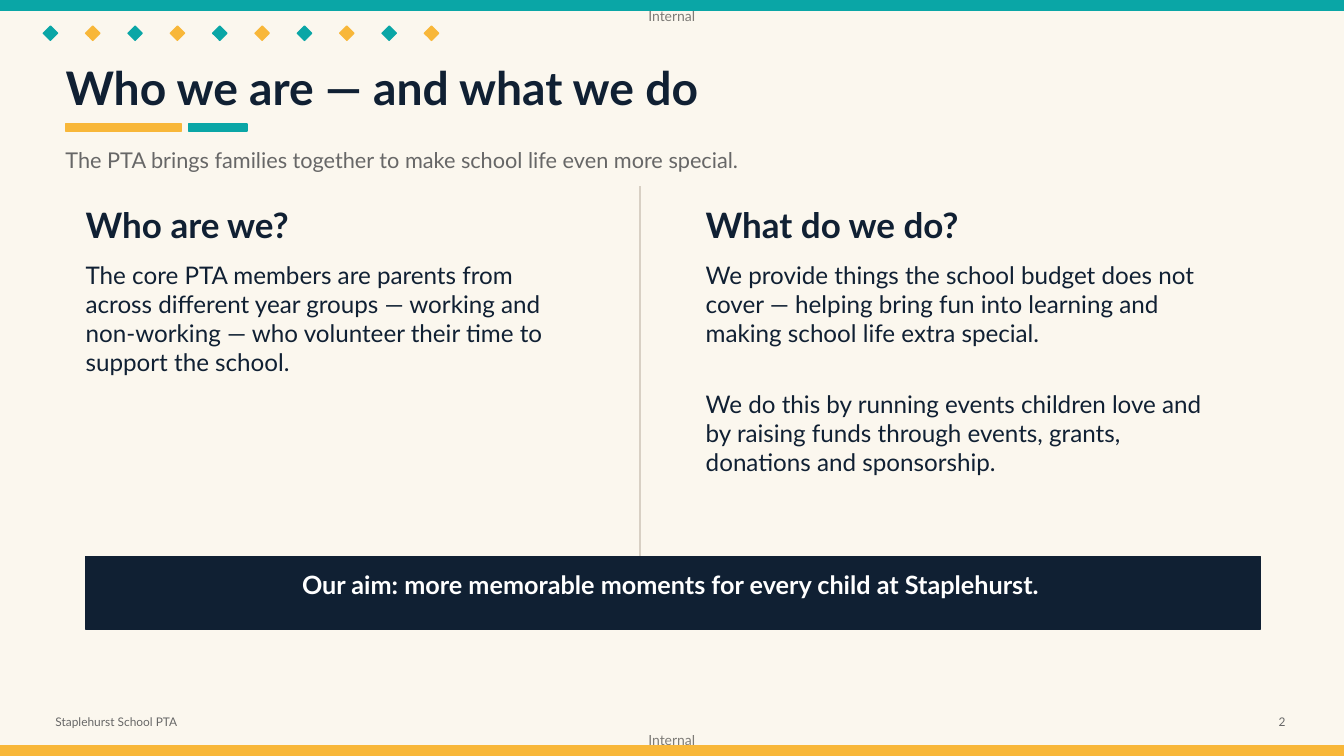
from lxml.etree import SubElement
from pptx import Presentation
from pptx.dml.color import RGBColor
from pptx.enum.shapes import MSO_CONNECTOR, MSO_SHAPE
from pptx.enum.text import MSO_ANCHOR, MSO_AUTO_SIZE, PP_ALIGN
from pptx.oxml.ns import qn
from pptx.util import Inches, Pt

COLORS = {
    "cream": "FBF7EE",
    "teal": "0AA6A6",
    "gold": "F8B739",
    "navy": "102033",
    "grey": "676767",
    "rule": "D8D0C4",
    "black": "000000",
    "white": "FFFFFF",
}
FONT = "Lato"
WIDTH, HEIGHT = 13.33, 7.5


def color(name):
    return RGBColor.from_string(COLORS[name])


def format_text(holder, text, size, ink, bold=False, align=PP_ALIGN.LEFT,
                anchor=MSO_ANCHOR.MIDDLE, spacing=None, wrap=True):
    frame = holder.text_frame
    frame.text = text
    frame.word_wrap = wrap
    frame.auto_size = MSO_AUTO_SIZE.NONE
    frame.vertical_anchor = anchor
    frame.margin_left = frame.margin_right = 0
    frame.margin_top = frame.margin_bottom = 0
    paragraph = frame.paragraphs[0]
    paragraph.alignment = align
    if spacing:
        paragraph.line_spacing = spacing
    font = paragraph.runs[0].font
    font.name = FONT
    font.size = Pt(size)
    font.bold = bold
    font.color.rgb = color(ink)


def add_text(slide, box, text, size, ink, **style):
    label = slide.shapes.add_textbox(*map(Inches, box))
    format_text(label, text, size, ink, **style)
    return label


def add_block(slide, box, fill, rotation=0):
    block = slide.shapes.add_shape(MSO_SHAPE.RECTANGLE, *map(Inches, box))
    block.shadow.inherit = False
    block.rotation = rotation
    block.fill.solid()
    block.fill.fore_color.rgb = color(fill)
    block.line.color.rgb = color(fill)
    block.line.width = Pt(1)


def add_marking(slide, top):
    marking = add_text(slide, (6.43, top, 0.49, 0.17), "Internal", 10, "black",
                       anchor=MSO_ANCHOR.TOP, wrap=False)
    for ink in marking.text_frame.paragraphs[0].runs[0].font.fill._xPr.iter(qn("a:srgbClr")):
        SubElement(ink, qn("a:alpha"), val="50000")


def add_frame(slide):
    for top in (0.07, 7.26):
        add_marking(slide, top)
    add_block(slide, (0, 0, WIDTH, 0.1), "teal")
    add_block(slide, (0, HEIGHT - 0.1, WIDTH, 0.1), "gold")


def add_bunting(slide, left, top, count=10, size=0.1, pitch=0.42):
    for index in range(count):
        add_block(slide, (left + index * pitch, top, size, size),
                  ("teal", "gold")[index % 2], rotation=45)


def add_footer(slide, left, top, width, height=0.22):
    add_text(slide, (left, top, 3.3, height), "Staplehurst School PTA", 8.5, "grey")
    add_text(slide, (left + width - 0.4, top, 0.4, height), "2", 8.5, "grey",
             align=PP_ALIGN.RIGHT)


def add_heading(slide, left, top):
    title = slide.shapes.title
    title.left, title.top = Inches(left), Inches(top)
    title.width, title.height = Inches(8.7), Inches(0.62)
    format_text(title, "Who we are — and what we do", 33, "navy", bold=True)
    add_block(slide, (left, top + 0.68, 1.15, 0.07), "gold")
    add_block(slide, (left + 1.22, top + 0.68, 0.58, 0.07), "teal")
    add_text(slide, (left, top + 0.83, 9.5, 0.42),
             "The PTA brings families together to make school life even more special.",
             15.5, "grey")


def add_column(slide, left, top, width, question, answers):
    add_text(slide, (left, top, width, 0.42), question, 25, "navy", bold=True)
    for index, answer in enumerate(answers):
        add_text(slide, (left, top + 0.56 + index * 1.28, width, 1.25), answer,
                 17.3, "navy", anchor=MSO_ANCHOR.TOP)


def add_divider(slide, x, top, bottom):
    divider = slide.shapes.add_connector(
        MSO_CONNECTOR.STRAIGHT, Inches(x), Inches(top), Inches(x), Inches(bottom))
    divider.line.color.rgb = color("rule")
    divider.line.width = Pt(1.4)
    SubElement(divider._element.spPr, qn("a:effectLst"))


def add_aim(slide, left, top, width, height):
    add_block(slide, (left, top, width, height), "navy")
    add_text(slide, (left + 0.25, top + 0.16, width - 0.55, 0.28),
             "Our aim: more memorable moments for every child at Staplehurst.",
             18, "white", bold=True, align=PP_ALIGN.CENTER, spacing=0.9)


def build_about_slide(deck):
    slide = deck.slides.add_slide(deck.slide_layouts.get_by_name("Title Only"))
    slide.background.fill.solid()
    slide.background.fill.fore_color.rgb = color("cream")
    add_frame(slide)
    add_bunting(slide, 0.45, 0.28)
    add_footer(slide, 0.55, 7.05, 12.2)
    add_heading(slide, 0.65, 0.55)
    add_column(slide, 0.85, 2.02, 4.75, "Who are we?", [
        "The core PTA members are parents from across different year groups — "
        "working and non-working — who volunteer their time to support the school.",
    ])
    add_divider(slide, 6.35, 1.85, 5.6)
    add_column(slide, 7, 2.02, 5.0, "What do we do?", [
        "We provide things the school budget does not cover — helping bring fun "
        "into learning and making school life extra special.",
        "We do this by running events children love and by raising funds through "
        "events, grants, donations and sponsorship.",
    ])
    add_aim(slide, 0.85, 5.52, 11.65, 0.72)


def main():
    deck = Presentation()
    deck.slide_width, deck.slide_height = Inches(WIDTH), Inches(HEIGHT)
    build_about_slide(deck)
    deck.save("out.pptx")


if __name__ == "__main__":
    main()
